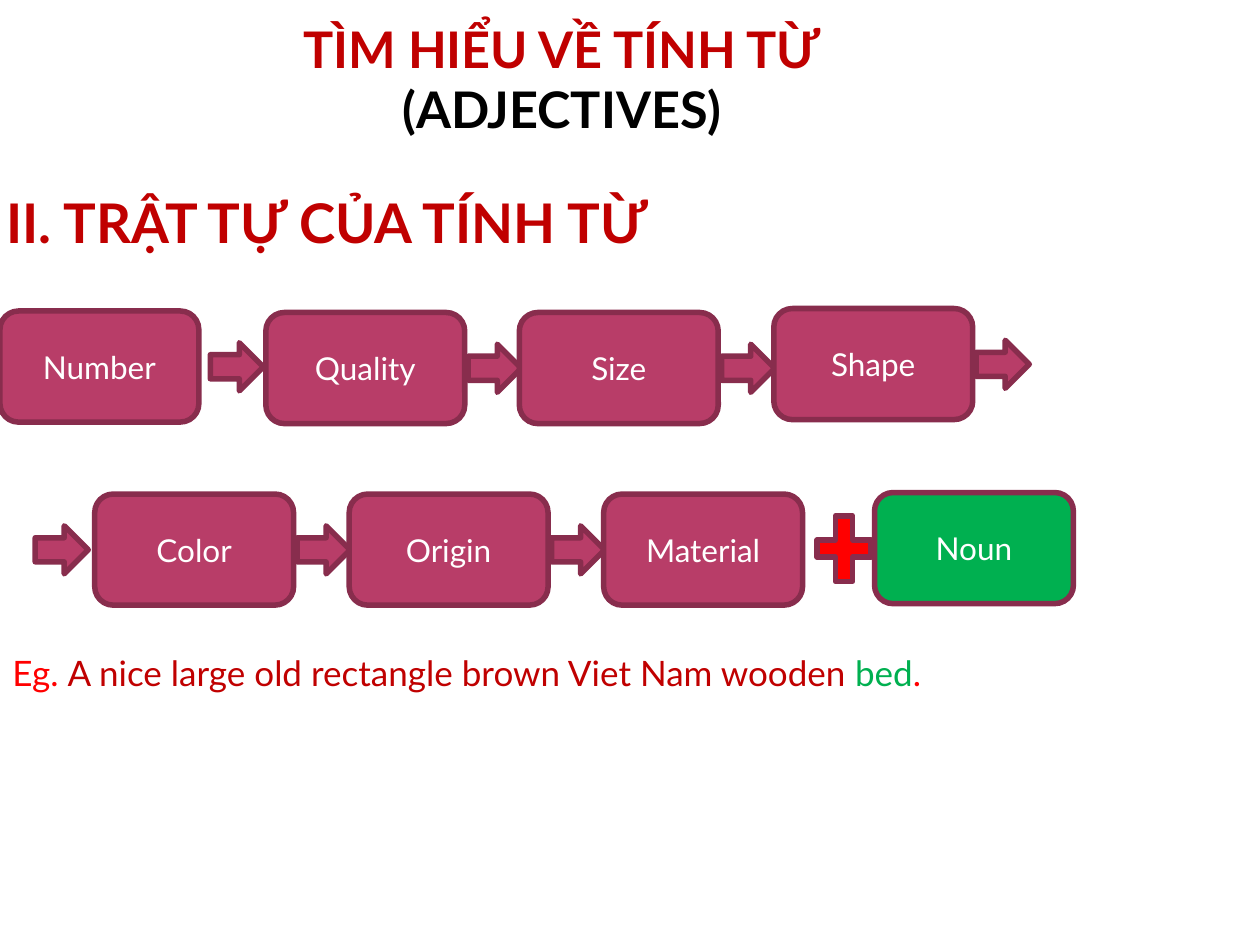
from pptx import Presentation
from pptx.dml.color import RGBColor as RGB
from pptx.enum.shapes import MSO_SHAPE as Kind
from pptx.enum.text import MSO_ANCHOR as Anchor, PP_ALIGN as Align
from pptx.util import Cm, Pt

RED = RGB(0xC0, 0x00, 0x00)
BRIGHT = RGB(0xFF, 0x00, 0x00)
BLACK = RGB(0x00, 0x00, 0x00)
WHITE = RGB(0xFF, 0xFF, 0xFF)
ROSE = RGB(0xB8, 0x3D, 0x68)
PLUM = RGB(0x88, 0x2D, 0x4D)
GREEN = RGB(0x00, 0xB0, 0x50)

BOX = Cm(4.01), Cm(2.24)
ARROW = Cm(1.07), Cm(0.97)

deck = Presentation()
deck.slide_width, deck.slide_height = Cm(25.4), Cm(19.05)
slide = deck.slides.add_slide(deck.slide_layouts[6])


def add_text(top, width, height, size, parts, bold=False):
    """Add a text box at the left edge; a part of "\n" breaks the line."""
    frame = slide.shapes.add_textbox(0, Cm(top), Cm(width), Cm(height)).text_frame
    frame.word_wrap = True
    para = frame.paragraphs[0]
    para.font.name, para.font.size, para.font.bold = "Lato", Pt(size), bold
    for words, color in parts:
        if words == "\n":
            para.add_line_break()
            continue
        run = para.add_run()
        run.text = words
        run.font.color.rgb = color
    return frame


def add_block(kind, left, top, size, fill, label=""):
    """Add an outlined shape with an optional centred label."""
    shape = slide.shapes.add_shape(kind, Cm(left), Cm(top), *size)
    shape.shadow.inherit = False
    shape.fill.solid()
    shape.fill.fore_color.rgb = fill
    shape.line.color.rgb = PLUM
    shape.line.width = Pt(3.15)
    if label:
        frame = shape.text_frame
        frame.vertical_anchor = Anchor.MIDDLE
        para = frame.paragraphs[0]
        para.text = label
        para.alignment = Align.CENTER
        para.font.name, para.font.size = "Lato", Pt(18)
        para.font.color.rgb = WHITE


# Title and heading, each held one line above the bottom of its box
title = add_text(0.03, 22.66, 3.99, 28.8, [
    ("TÌM HIỂU VỀ TÍNH TỪ", RED), ("\n", None), ("(ADJECTIVES)", BLACK)], True)
title.paragraphs[0].alignment = Align.CENTER
head = add_text(4.01, 16.71, 2.44, 31.2, [("II. TRẬT TỰ CỦA TÍNH TỪ", RED)], True)
for frame, gap in ((title, 1.22), (head, 1.32)):
    frame.vertical_anchor = Anchor.BOTTOM
    frame.margin_left = frame.margin_right = Cm(0.13)
    frame.margin_top, frame.margin_bottom = 0, Cm(gap)

# Order of adjectives: label, left, top, offset of the arrow that follows
steps = [
    ("Number", 0, 6.27, 4.24),
    ("Quality", 5.36, 6.3, 4.08),
    ("Size", 10.47, 6.3, 4.08),
    ("Shape", 15.6, 6.22, 4.08),
    ("Color", 1.91, 9.96, 4.08),
    ("Origin", 7.04, 9.96, 4.08),
    ("Material", 12.17, 9.96, None),
]
for label, left, top, step in steps:
    add_block(Kind.ROUNDED_RECTANGLE, left, top, BOX, ROSE, label)
    if step:
        add_block(Kind.RIGHT_ARROW, left + step, top + 0.64, ARROW, ROSE)

# Arrow into the second row, then plus sign and noun
add_block(Kind.RIGHT_ARROW, 0.71, 10.6, ARROW, ROSE)
add_block(Kind.MATH_PLUS, 16.28, 10.16, (Cm(1.47), Cm(1.8)), BRIGHT)
add_block(Kind.ROUNDED_RECTANGLE, 17.63, 9.93, BOX, GREEN, "Noun")

# Example
note = add_text(12.83, 21.77, 1.47, 20, [
    ("Eg. ", BRIGHT), ("A nice large old rectangle brown Viet Nam wooden ", RED),
    ("bed", GREEN), (".", BRIGHT)])
note.vertical_anchor = Anchor.MIDDLE

deck.save("out.pptx")
